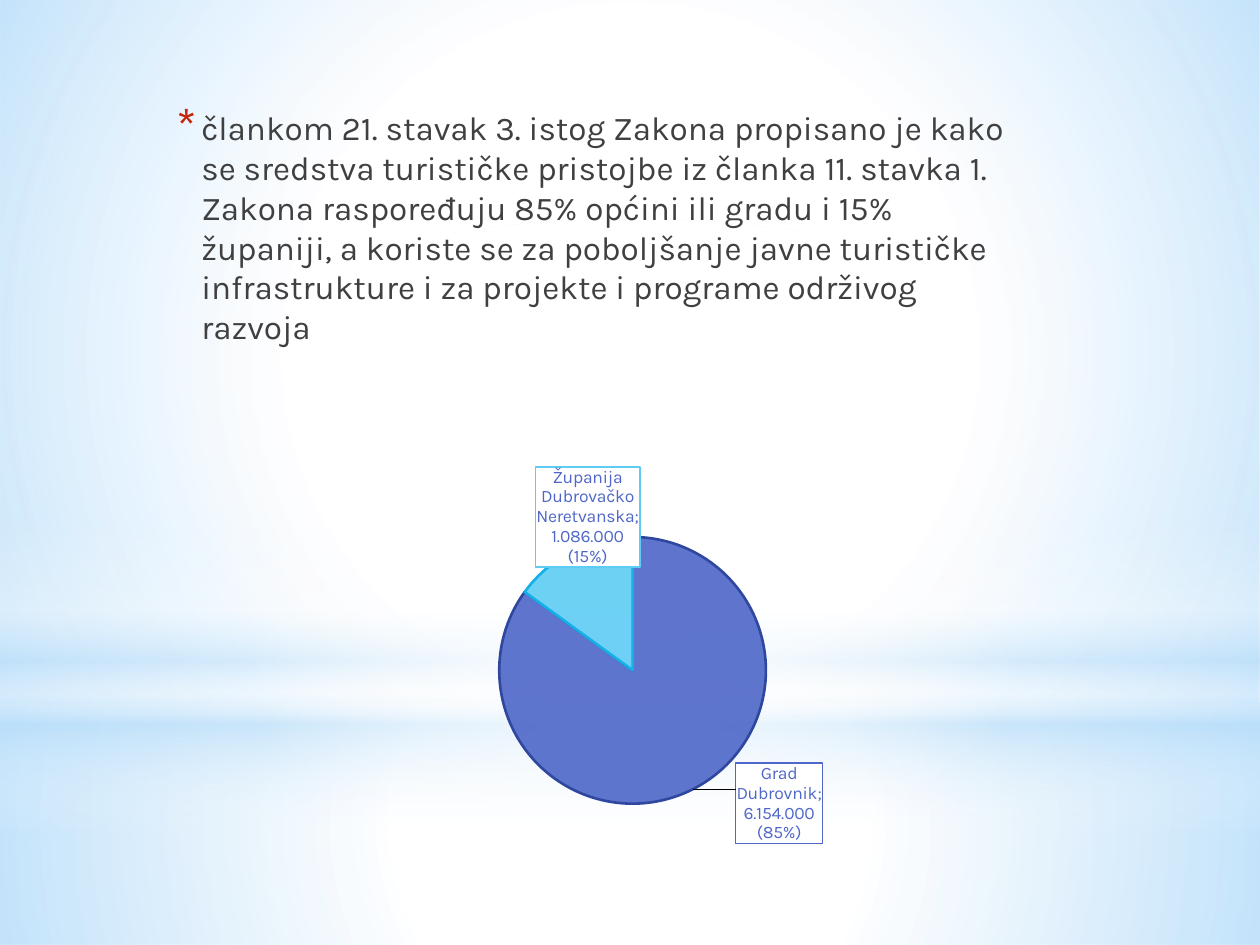
from lxml.etree import SubElement
from pptx import Presentation
from pptx.chart.data import CategoryChartData
from pptx.dml.color import RGBColor
from pptx.enum.chart import XL_CHART_TYPE as ChartType, XL_LABEL_POSITION as LabelPosition
from pptx.enum.shapes import MSO_SHAPE as Shape
from pptx.oxml import parse_xml
from pptx.oxml.ns import nsdecls, qn
from pptx.util import Emu, Pt

FONT = "Karla"
WHITE = RGBColor(0xFF, 0xFF, 0xFF)
SKY = RGBColor(0xB4, 0xDC, 0xFA)
GRAY = RGBColor(0x40, 0x40, 0x40)
RED = RGBColor(0xC3, 0x26, 0x0C)
BLUE = RGBColor(0x4E, 0x67, 0xC8)
DARK_BLUE = RGBColor(0x2F, 0x47, 0x9F)
CYAN = RGBColor(0x5E, 0xCC, 0xF3)
DARK_CYAN = RGBColor(0x14, 0xB0, 0xE8)

RADIAL = '<a:path path="circle"><a:fillToRect l="50000" t="50000" r="50000" b="50000"/></a:path>'
VERTICAL = '<a:lin ang="5400000" scaled="0"/>'

BACKDROP = [
    (Shape.RECTANGLE, (0, 703, 1260, 242), RADIAL, [(0, WHITE, 91), (37, WHITE, 76), (100, SKY, 79)]),
    (Shape.RECTANGLE, (0, 0, 1260, 703), RADIAL, [(0, WHITE, 89), (48, WHITE, 62), (100, SKY, 79)]),
    (Shape.RECTANGLE, (0, 519, 1260, 315), VERTICAL,
     [(0, WHITE, 0), (29, WHITE, 30), (45, SKY, 40), (55, WHITE, 26), (65, SKY, 60), (100, WHITE, 0)]),
    (Shape.OVAL, (0, 220, 1260, 703), RADIAL, [(0, WHITE, 100), (56, WHITE, 0)]),
]
BODY = ("člankom 21. stavak 3. istog Zakona propisano je kako se sredstva turističke pristojbe "
        "iz članka 11. stavka 1. Zakona raspoređuju 85% općini ili gradu i 15% županiji, a koriste "
        "se za poboljšanje javne turističke infrastrukture i za projekte i programe održivog razvoja")
SLICES = [
    ("1", 0.85, "Grad Dubrovnik; 6.154.000 (85%)", BLUE, DARK_BLUE, (0.2, 0.14)),
    ("2", 0.15, "Županija Dubrovačko Neretvanska; 1.086.000 (15%)", CYAN, DARK_CYAN, (-0.06, -0.21)),
]


def px(length):
    """Turn pixels into EMU."""
    return Emu(round(length * 914400 / 126))


def add_glow(slide, kind, box, direction, stops):
    """Add a borderless shape with a translucent gradient."""
    shape = slide.shapes.add_shape(kind, *map(px, box))
    shape.shadow.inherit = False
    shape.line.fill.background()
    stop_xml = "".join(
        f'<a:gs pos="{position * 1000}"><a:srgbClr val="{color}"><a:alpha val="{alpha * 1000}"/>'
        f'</a:srgbClr></a:gs>' for position, color, alpha in stops)
    gradient = parse_xml(f'<a:gradFill {nsdecls("a")} rotWithShape="1"><a:gsLst>{stop_xml}</a:gsLst>'
                         f'{direction}</a:gradFill>')
    shape._element.spPr.find(qn("a:prstGeom")).addnext(gradient)


def add_bullet_text(slide, box, text):
    """Add a text box with one starred paragraph."""
    frame = slide.shapes.add_textbox(*map(px, box)).text_frame
    frame.word_wrap = True
    paragraph = frame.paragraphs[0]
    paragraph.text = text
    properties = paragraph._p.get_or_add_pPr()
    properties.set("marL", str(px(32)))
    properties.set("indent", str(px(-25)))
    color = SubElement(properties, qn("a:buClr"))
    SubElement(color, qn("a:srgbClr"), val=str(RED))
    SubElement(properties, qn("a:buSzPct"), val="150000")
    SubElement(properties, qn("a:buFont"), typeface=FONT)
    SubElement(properties, qn("a:buChar"), char="*")
    paragraph.space_after = Pt(3)
    paragraph.font.size = Pt(19)
    paragraph.font.name = FONT
    paragraph.font.color.rgb = GRAY


def manual_layout(settings):
    """Make a chart layout element from names and values."""
    entries = "".join(f'<c:{name} val="{value}"/>' for name, value in settings.items())
    return parse_xml(f'<c:layout {nsdecls("c")}><c:manualLayout>{entries}</c:manualLayout></c:layout>')


def style_slice(point, text, color, edge, offset):
    """Colour one pie slice and give it a framed, shifted label."""
    point.format.fill.solid()
    point.format.fill.fore_color.rgb = color
    for srgb in point.format.fill._xPr.iter(qn("a:srgbClr")):
        SubElement(srgb, qn("a:alpha"), val="90000")
    point.format.line.color.rgb = edge
    point.format.line.width = Pt(1.5)
    label = point.data_label
    run = label.text_frame.paragraphs[0].add_run()
    run.text = text
    run.font.size = Pt(10)
    run.font.name = FONT
    run.font.color.rgb = BLUE
    label.position = LabelPosition.INSIDE_END
    frame = parse_xml(
        f'<c:spPr {nsdecls("c", "a")}><a:solidFill><a:srgbClr val="{WHITE}"/></a:solidFill>'
        f'<a:ln w="{Pt(1)}"><a:solidFill><a:srgbClr val="{color}"/></a:solidFill></a:ln></c:spPr>')
    element = label._get_or_add_dLbl()
    element.find(qn("c:tx")).addnext(frame)
    element.find(qn("c:showCatName")).set("val", "1")
    element.find(qn("c:idx")).addnext(manual_layout(dict(zip("xy", offset))))


def add_pie(slide, box, plot_box):
    """Add the pie chart with its plot area placed inside the frame."""
    data = CategoryChartData(number_format="0%")
    data.categories = [name for name, *_ in SLICES]
    data.add_series("Series 1", [value for _, value, *_ in SLICES])
    chart = slide.shapes.add_chart(ChartType.PIE, *map(px, box), data).chart
    chart.has_legend = False
    chart.has_title = False
    chart.font.size = Pt(10)
    chart.font.name = FONT
    plot = chart.plots[0]
    plot.vary_by_categories = False
    series = plot.series[0]
    labels = series.data_labels
    labels.show_value = True
    labels.show_category_name = True
    labels.number_format = "0%"
    labels.number_format_is_linked = False
    labels.position = LabelPosition.INSIDE_END
    for index, (_, _, *style) in enumerate(SLICES):
        style_slice(series.points[index], *style)
    left, top, width, height = box
    x, y, w, h = plot_box
    layout = manual_layout({
        "layoutTarget": "inner", "xMode": "edge", "yMode": "edge",
        "x": round((x - left) / width, 3), "y": round((y - top) / height, 3),
        "w": round(w / width, 3), "h": round(h / height, 3)})
    plot_area = chart._chartSpace.chart.plotArea
    for old in plot_area.findall(qn("c:layout")):
        plot_area.remove(old)
    plot_area.insert(0, layout)


def main():
    """Build and save the slide."""
    presentation = Presentation()
    presentation.slide_width = px(1260)
    presentation.slide_height = px(945)
    slide = presentation.slides.add_slide(presentation.slide_layouts[6])
    slide.background.fill.solid()
    slide.background.fill.fore_color.rgb = WHITE
    for glow in BACKDROP:
        add_glow(slide, *glow)
    add_bullet_text(slide, (157, 101, 882, 479), BODY)
    add_pie(slide, (302, 442, 664, 436), (499, 537, 267, 267))
    presentation.save("out.pptx")


if __name__ == "__main__":
    main()
